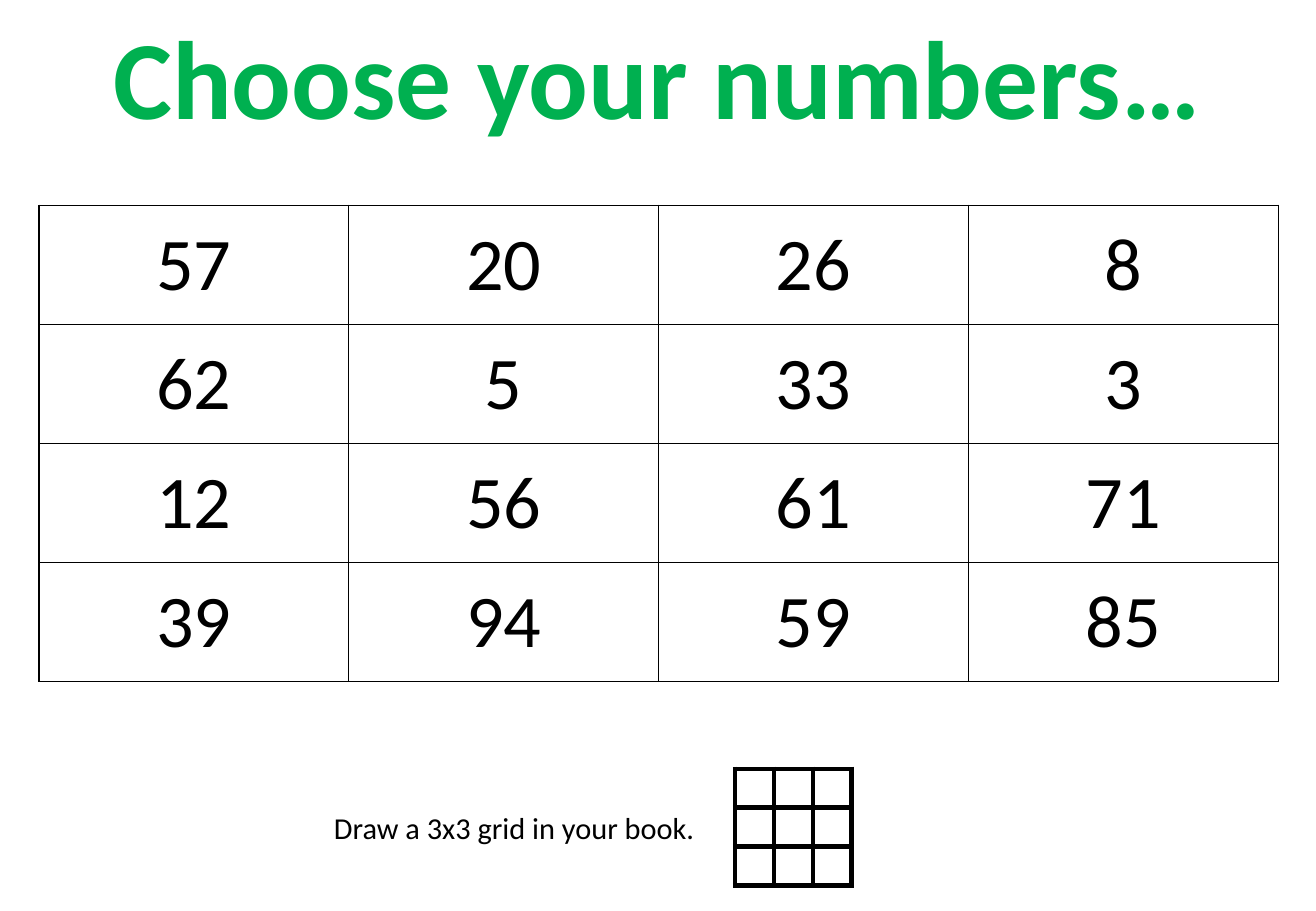
from lxml import etree
from pptx import Presentation
from pptx.dml.color import RGBColor
from pptx.enum.text import MSO_ANCHOR, MSO_AUTO_SIZE, PP_ALIGN
from pptx.oxml.ns import qn
from pptx.util import Inches, Pt

TITLE = "Choose your numbers…"
INSTRUCTION = "Draw a 3x3 grid in your book."
NUMBERS = [
    ["57", "20", "26", "8"],
    ["62", "5", "33", "3"],
    ["12", "56", "61", "71"],
    ["39", "94", "59", "85"],
]
EMPTY_GRID = [[""] * 3 for _ in range(3)]

BLACK = RGBColor(0x00, 0x00, 0x00)
WHITE = RGBColor(0xFF, 0xFF, 0xFF)
GREEN = RGBColor(0x00, 0xB0, 0x50)
FONT = "Calibri"
CENTER = PP_ALIGN.CENTER
LEFT = PP_ALIGN.LEFT
TOP = MSO_ANCHOR.TOP
MIDDLE = MSO_ANCHOR.MIDDLE
FIT_SHAPE = MSO_AUTO_SIZE.SHAPE_TO_FIT_TEXT
TITLE_ONLY = 5


def add_text(paragraph, text, size, color, alignment, bold=False):
    """Add one formatted run to a paragraph."""
    paragraph.alignment = alignment
    run = paragraph.add_run()
    run.text = text
    run.font.name = FONT
    run.font.size = Pt(size)
    run.font.bold = bold
    run.font.color.rgb = color


def add_borders(cell, width):
    """Draw a solid line on all four sides of a cell."""
    properties = cell._tc.get_or_add_tcPr()
    for side in ("a:lnL", "a:lnR", "a:lnT", "a:lnB"):
        line = etree.SubElement(properties, qn(side), w=str(Pt(width)))
        fill = etree.SubElement(line, qn("a:solidFill"))
        etree.SubElement(fill, qn("a:srgbClr"), val=str(BLACK))


def add_grid(slide, rows, left, top, cell_width, cell_height, border):
    """Add a table of equal white cells with black borders."""
    row_count, column_count = len(rows), len(rows[0])
    table = slide.shapes.add_table(
        row_count, column_count, Inches(left), Inches(top),
        Inches(cell_width * column_count), Inches(cell_height * row_count),
    ).table
    table.first_row = False
    table.horz_banding = False
    for row_index, row in enumerate(rows):
        for column_index, text in enumerate(row):
            cell = table.cell(row_index, column_index)
            cell.margin_left = cell.margin_right = 0
            cell.margin_top = cell.margin_bottom = 0
            cell.vertical_anchor = MIDDLE
            add_borders(cell, border)
            cell.fill.solid()
            cell.fill.fore_color.rgb = WHITE
            if text:
                add_text(cell.text_frame.paragraphs[0], text, 44, BLACK, CENTER)


def place_text(shape, left, top, width, height):
    """Position a text shape and return its first paragraph."""
    shape.left, shape.top = Inches(left), Inches(top)
    shape.width, shape.height = Inches(width), Inches(height)
    frame = shape.text_frame
    frame.word_wrap = False
    frame.auto_size = FIT_SHAPE
    frame.vertical_anchor = TOP
    return frame.paragraphs[0]


def main():
    """Build and save the slide."""
    presentation = Presentation()
    presentation.slide_width = Inches(10.83)
    presentation.slide_height = Inches(7.5)
    slide = presentation.slides.add_slide(presentation.slide_layouts[TITLE_ONLY])

    title = place_text(slide.shapes.title, 0.79, 0.02, 9.24, 1.21)
    add_text(title, TITLE, 66, GREEN, CENTER, bold=True)

    add_grid(slide, NUMBERS, 0.32, 1.69, 2.55, 0.98, border=1)
    add_grid(slide, EMPTY_GRID, 6.05, 6.33, 0.32, 0.32, border=3)

    text_box = slide.shapes.add_textbox(0, 0, 0, 0)
    instruction = place_text(text_box, 2.65, 6.61, 3.2, 0.4)
    add_text(instruction, INSTRUCTION, 18, BLACK, LEFT)

    presentation.save("out.pptx")


if __name__ == "__main__":
    main()
